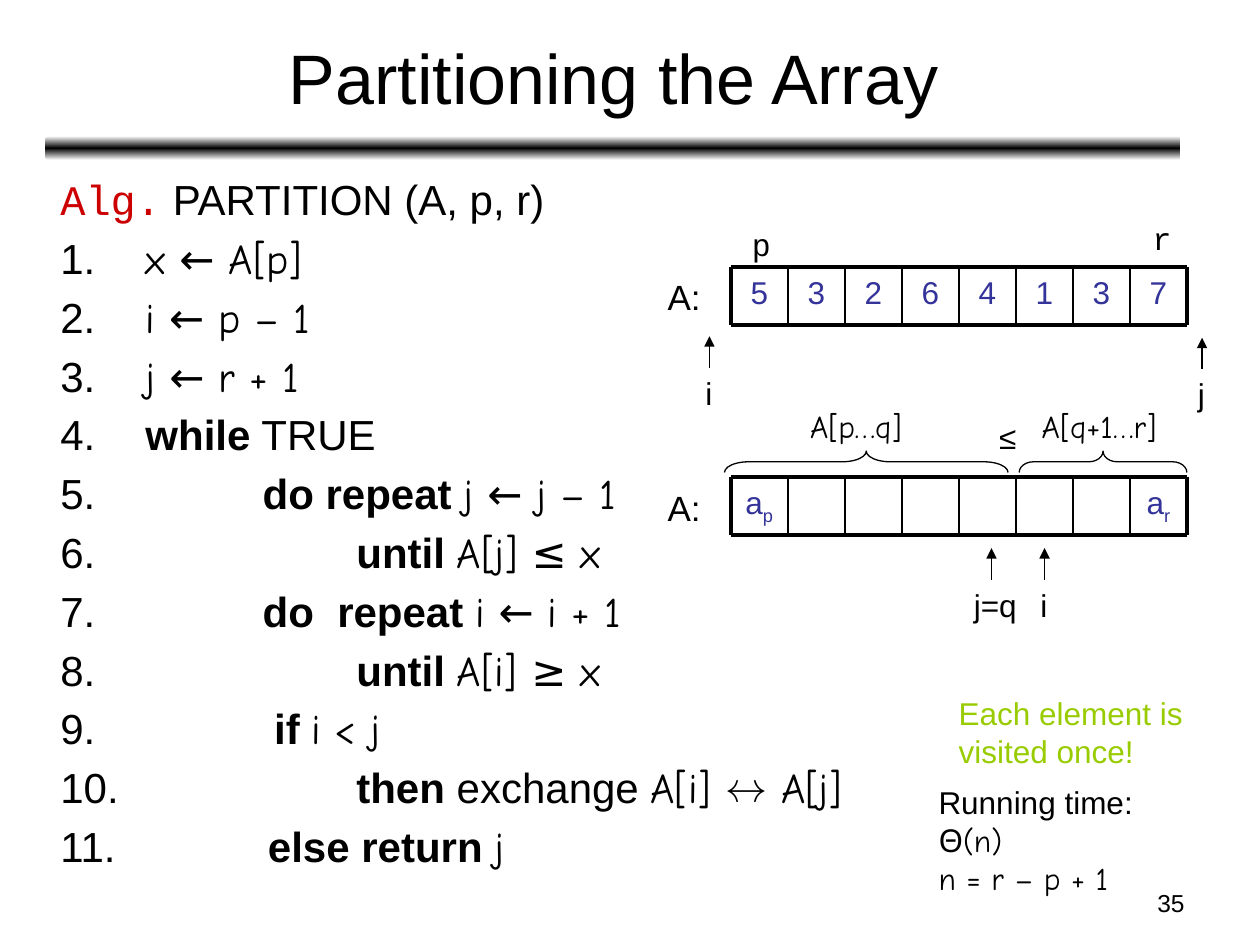
import pptx
import pptx.util
import pptx.dml.color
import pptx.enum.shapes
import pptx.enum.text
import pptx.oxml
from pptx.oxml.ns import qn, nsdecls

Pt = pptx.util.Pt
SHAPE = pptx.enum.shapes.MSO_SHAPE
ALIGN = pptx.enum.text.PP_ALIGN
ANCHOR = pptx.enum.text.MSO_ANCHOR
BLACK, BLUE, RED, GREEN = "000000", "333399", "CC0000", "99CC00"
SANS, HAND, MONO = "Arial", "Comic Neue", "Courier New"

TITLE = "Partitioning the Array"
HEADING = [("Alg.", MONO, RED), (" PARTITION (A, p, r)", SANS, BLACK)]
# (left indent, bold keyword, plain words, expression)
STEPS = [
    (42, "", "", "x ← A[p]"),
    (42, "", "", "i ← p – 1"),
    (42, "", "", "j ← r + 1"),
    (42, "while", " TRUE", ""),
    (109, "do repeat ", "", "j ← j – 1"),
    (162.5, "until ", "", "A[j] ≤ x"),
    (109, "do  repeat ", "", "i ← i + 1"),
    (162.5, "until ", "", "A[i] ≥ x"),
    (115.5, "if ", "", "i < j"),
    (162.5, "then", " exchange ", "A[i] ↔ A[j]"),
    (112, "else return ", "", "j"),
]
# (top, cells); a cell is a text and its subscript
ARRAYS = [
    (152.6, [(d, "") for d in "53264137"]),
    (272.6, [("a", "p")] + [("", "")] * 6 + [("a", "r")]),
]
ARRAY_LEFT, CELL_W, CELL_H = 417.6, 32.58, 33.1
# (text, left, top, width, size, font)
LABELS = [
    ("A:", 374.4, 154.1, 38, 20, SANS),
    ("A:", 374.4, 274.3, 38, 20, SANS),
    ("p", 422.6, 125.3, 22.3, 18, MONO),
    ("r", 651.6, 121.7, 20.2, 18, MONO),
    ("i", 396, 210.2, 18.7, 18, SANS),
    ("j", 677.5, 211, 18.7, 18, SANS),
    ("i", 587.5, 331.2, 18.7, 18, SANS),
    ("j=q", 549.4, 331.2, 38.9, 18, SANS),
    ("A[p…q]", 455.8, 229, 72, 18, HAND),
    ("A[q+1…r]", 588.2, 229, 87.8, 18, HAND),
    ("≤", 563.8, 235.4, 24.5, 18, SANS),
]
POINTERS = [(405.4, 210.2), (686.9, 211), (596.9, 331.2), (566.6, 331.2)]  # foot of each arrow
POINTER_LEN = 18
BRACES = [(488.9, 182.9, 162, 1.125), (624.2, 216, 95.8, 0.667)]  # left, top, length, curl
BRACE_W = 12.2


def colour(hex_text):
    return pptx.dml.color.RGBColor.from_string(hex_text)


def add_run(p, text, size, font=SANS, color=BLACK, bold=False):
    r = p.add_run()
    r.text = text
    r.font.size, r.font.name, r.font.bold = Pt(size), font, bold
    r.font.color.rgb = colour(color)
    return r


def add_box(shapes, left, top, width, height, wrap=False):
    tf = shapes.add_textbox(Pt(left), Pt(top), Pt(width), Pt(height)).text_frame
    tf.word_wrap = wrap
    return tf


def add_line(shapes, x1, y1, x2, y2, weight, arrow=False):
    line = shapes.add_connector(pptx.enum.shapes.MSO_CONNECTOR.STRAIGHT,
                                Pt(x1), Pt(y1), Pt(x2), Pt(y2))
    line.line.color.rgb = colour(BLACK)
    line.line.width = Pt(weight)
    if arrow:
        line.line._get_or_add_ln().append(
            pptx.oxml.parse_xml(f'<a:tailEnd {nsdecls("a")} type="triangle"/>'))
    line._element.spPr.append(pptx.oxml.parse_xml(f'<a:effectLst {nsdecls("a")}/>'))


def add_title_bar(shapes):
    bar = shapes.add_shape(SHAPE.ROUNDED_RECTANGLE, Pt(25.9), Pt(77.8), Pt(648.7), Pt(13.7))
    bar.shadow.inherit = False
    bar.line.fill.background()
    bar.fill.gradient()
    bar.fill.gradient_angle = 270
    stops = bar._element.spPr.find(qn("a:gradFill")).find(qn("a:gsLst"))
    for stop in list(stops):
        stops.remove(stop)
    for pos, color in [(0, "FFFFFF"), (50, BLACK), (100, "FFFFFF")]:
        stops.append(pptx.oxml.parse_xml(
            f'<a:gs {nsdecls("a")} pos="{pos * 1000}"><a:srgbClr val="{color}"/></a:gs>'))


def number(p, indent):
    """Number the paragraph, with the number at the left edge and its text at indent."""
    pPr = p._p.get_or_add_pPr()
    pPr.set("marL", str(Pt(indent)))
    pPr.set("indent", str(-Pt(indent)))
    pPr.append(pptx.oxml.parse_xml(f'<a:buFont {nsdecls("a")} typeface="{SANS}"/>'))
    pPr.append(pptx.oxml.parse_xml(f'<a:buAutoNum {nsdecls("a")} type="arabicPeriod"/>'))


def add_algorithm(shapes):
    tf = add_box(shapes, 27.4, 95.8, 648, 420.5, wrap=True)
    for text, font, color in HEADING:
        add_run(tf.paragraphs[0], text, 24, font, color)
    for indent, keyword, words, expression in STEPS:
        p = tf.add_paragraph()
        p.space_before = Pt(4.8)
        number(p, indent)
        add_run(p, " ", 24)  # the number takes its font and weight from the first run
        for text, font, bold in [(keyword, SANS, True), (words, SANS, False),
                                 (expression, HAND, False)]:
            if text:
                add_run(p, text, 24, font, bold=bold)


def add_array(shapes, top, cells):
    group = shapes.add_group_shape().shapes
    right, bottom = ARRAY_LEFT + len(cells) * CELL_W, top + CELL_H
    for i, (text, sub) in enumerate(cells):
        if not text:
            continue
        p = add_box(group, ARRAY_LEFT + i * CELL_W, top, CELL_W, CELL_H, wrap=True).paragraphs[0]
        p.alignment = ALIGN.CENTER
        add_run(p, text, 18, color=BLUE)
        if sub:
            add_run(p, sub, 18, color=BLUE).font._element.set("baseline", "-25000")
    for y in (top, bottom):
        add_line(group, ARRAY_LEFT, y, right, y, 2.25)
    for i in range(len(cells) + 1):
        x = ARRAY_LEFT + i * CELL_W
        add_line(group, x, top, x, bottom, 2.25 if i in (0, len(cells)) else 1)


def add_brace(shapes, left, top, length, curl):
    brace = shapes.add_shape(SHAPE.LEFT_BRACE, Pt(left), Pt(top), Pt(BRACE_W), Pt(length))
    brace.adjustments[0] = curl
    brace.rotation = 90
    brace.shadow.inherit = False
    brace.fill.background()
    brace.line.color.rgb = colour(BLACK)
    brace.line.width = Pt(0.75)


def main():
    prs = pptx.Presentation()
    prs.slide_width, prs.slide_height = Pt(720), Pt(540)
    s = prs.slides.add_slide(prs.slide_layouts[5])
    title = s.shapes.title
    title.left, title.top, title.width, title.height = Pt(26.6), Pt(7.9), Pt(648), Pt(71.3)
    title.text_frame.vertical_anchor = ANCHOR.MIDDLE
    p = title.text_frame.paragraphs[0]
    p.alignment = ALIGN.CENTER
    add_run(p, TITLE, 40)

    add_title_bar(s.shapes)
    add_algorithm(s.shapes)
    for top, cells in ARRAYS:
        add_array(s.shapes, top, cells)
    for brace in BRACES:
        add_brace(s.shapes, *brace)
    for x, y in POINTERS:
        add_line(s.shapes, x, y, x, y - POINTER_LEN, 0.75, arrow=True)
    for text, left, top, width, size, font in LABELS:
        tf = add_box(s.shapes, left, top, width, size * 1.6)
        add_run(tf.paragraphs[0], text, size, font)

    tf = add_box(s.shapes, 540.7, 393.1, 142.6, 50.4)
    add_run(tf.paragraphs[0], "Each element is", 18, color=GREEN)
    add_run(tf.add_paragraph(), "visited once!", 18, color=GREEN)

    tf = add_box(s.shapes, 529.2, 444.2, 166.3, 50.4, wrap=True)
    add_run(tf.paragraphs[0], "Running time: ", 18)
    add_run(tf.paragraphs[0], "Θ(n)", 18, HAND)
    add_run(tf.add_paragraph(), "n = r – p + 1", 18, HAND)

    p = add_box(s.shapes, 516.2, 504, 167.8, 25.2, wrap=True).paragraphs[0]
    p.alignment = ALIGN.RIGHT
    add_run(p, "35", 14)
    prs.save("out.pptx")


if __name__ == "__main__":
    main()
